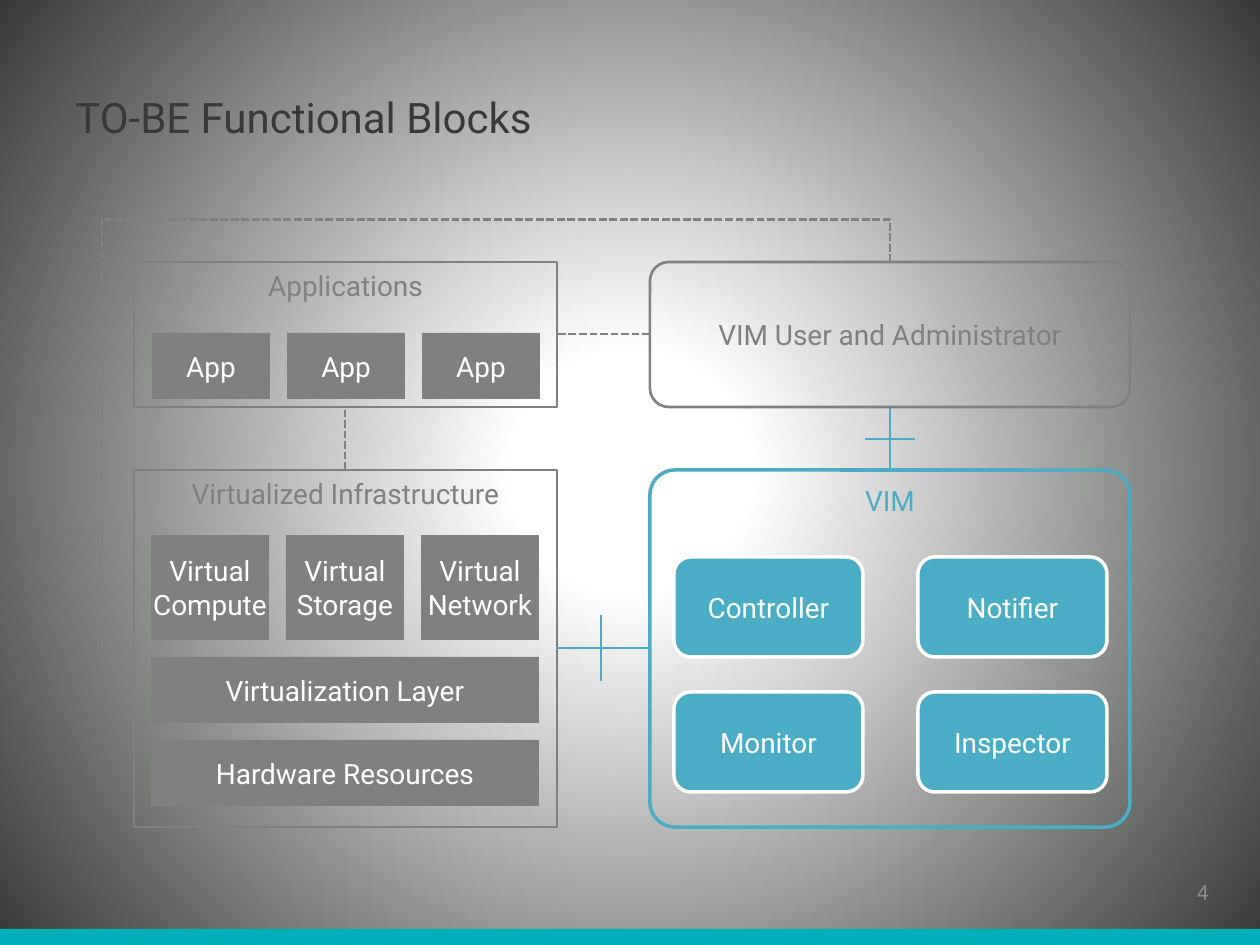
from dataclasses import dataclass

from lxml.etree import SubElement
from pptx import Presentation
from pptx.dml.color import RGBColor
from pptx.enum.dml import MSO_LINE
from pptx.enum.shapes import MSO_CONNECTOR, MSO_SHAPE
from pptx.enum.text import MSO_ANCHOR, PP_ALIGN
from pptx.oxml.ns import qn
from pptx.util import Emu, Pt

TITLE = "TO-BE Functional Blocks"
PAGE_NUMBER = "4"
APPS = ["App", "App", "App"]
VIRTUAL_RESOURCES = ["Virtual Compute", "Virtual Storage", "Virtual Network"]
LAYERS = ["Virtualization Layer", "Hardware Resources"]
VIM_PARTS = [["Controller", "Notifier"], ["Monitor", "Inspector"]]


@dataclass(frozen=True)
class Theme:
    font: str = "Roboto"
    dark: str = "373A36"
    gray: str = "808080"
    number: str = "8C8C8C"
    blue: str = "4BACC6"
    teal: str = "00B0B9"
    white: str = "FFFFFF"
    title_size: int = 24
    body_size: int = 16
    number_size: int = 12
    thin: float = 1.5
    thick: float = 2


THEME = Theme()
EMU_PER_PX = 914400 / 126
SLIDE_WIDTH, SLIDE_HEIGHT = 1260, 945

# Frames: left, top, width, height
LEFT, RIGHT, LEFT_WIDTH, RIGHT_WIDTH = 134, 650, 423, 480
UPPER, LOWER, UPPER_HEIGHT, LOWER_HEIGHT = 262, 470, 145, 357
APPLICATIONS = (LEFT, UPPER, LEFT_WIDTH, UPPER_HEIGHT)
INFRASTRUCTURE = (LEFT, LOWER, LEFT_WIDTH, LOWER_HEIGHT)
USER = (RIGHT, UPPER, RIGHT_WIDTH, UPPER_HEIGHT)
VIM = (RIGHT, LOWER, RIGHT_WIDTH, LOWER_HEIGHT)

TILE_LEFT, TILE_WIDTH, TILE_STEP = 151, 118, 135
LAYER_HEIGHT, LAYER_STEP = 66, 83
PART_WIDTH, PART_HEIGHT = 189, 100
PART_STEP_X, PART_STEP_Y = 244, 135


def px(value):
    return Emu(round(value * EMU_PER_PX))


def color(value):
    return RGBColor.from_string(value)


def write(shape, text, *, size=THEME.body_size, ink=THEME.white,
          align=PP_ALIGN.CENTER, anchor=MSO_ANCHOR.MIDDLE, side_margin=None):
    frame = shape.text_frame
    frame.word_wrap = True
    frame.vertical_anchor = anchor
    if side_margin is not None:
        frame.margin_left = frame.margin_right = px(side_margin)
    para = frame.paragraphs[0]
    para.alignment = align
    span = para.add_run()
    span.text = text
    span.font.name = THEME.font
    span.font.size = Pt(size)
    span.font.color.rgb = color(ink)


def add_text(page, bounds, text, **text_format):
    write(page.shapes.add_textbox(*map(px, bounds)), text, **text_format)


def add_box(page, bounds, text="", *, fill=None, line=None, width=THEME.thin,
            rounded=False, corner=None, **text_format):
    kind = MSO_SHAPE.ROUNDED_RECTANGLE if rounded else MSO_SHAPE.RECTANGLE
    box = page.shapes.add_shape(kind, *map(px, bounds))
    box.shadow.inherit = False
    if corner is not None:
        box.adjustments[0] = corner
    if fill:
        box.fill.solid()
        box.fill.fore_color.rgb = color(fill)
    else:
        box.fill.background()
    if line:
        box.line.color.rgb = color(line)
        box.line.width = Pt(width)
    else:
        box.line.fill.background()
    if text:
        write(box, text, **text_format)


def add_line(page, start, end, ink, dashed=False, kind=MSO_CONNECTOR.STRAIGHT):
    line = page.shapes.add_connector(kind, *map(px, (*start, *end)))
    line.line.color.rgb = color(ink)
    line.line.width = Pt(THEME.thin)
    if dashed:
        line.line.dash_style = MSO_LINE.SQUARE_DOT
    SubElement(line._element.spPr, qn("a:effectLst"))
    return line


def add_detour(page, start, end, top, left):
    """Dashed connector that runs up to top, across to left, down and into end."""
    (x1, y1), (x2, y2) = start, end
    rise, run = y2 - y1, x1 - x2
    middle_x, middle_y = (x1 + x2) / 2, (y1 + y2) / 2
    # The bounds are those before the quarter turn, so width and height swap.
    line = add_line(page, (middle_x + rise / 2, middle_y + run / 2),
                    (middle_x - rise / 2, middle_y - run / 2),
                    THEME.gray, True, MSO_CONNECTOR.ELBOW)
    properties = line._element.spPr
    properties.find(qn("a:xfrm")).set("rot", str(270 * 60000))
    geometry = properties.find(qn("a:prstGeom"))
    geometry.set("prst", "bentConnector4")
    guides = geometry.find(qn("a:avLst"))
    if guides is None:
        guides = SubElement(geometry, qn("a:avLst"))
    ratios = ((top - y1) / rise, (x1 - left) / run)
    for number, ratio in enumerate(ratios, 1):
        SubElement(guides, qn("a:gd"), name=f"adj{number}",
                   fmla=f"val {round(ratio * 100000)}")


def paint_background(page):
    fill = page.background.fill
    fill.gradient()
    stops = ((0.15, THEME.white), (1, THEME.dark))
    for stop, (position, ink) in zip(fill.gradient_stops, stops):
        stop.position = position
        stop.color.rgb = color(ink)
    gradient = page._element.find(".//" + qn("a:gradFill"))
    gradient.remove(gradient.find(qn("a:lin")))
    circle = SubElement(gradient, qn("a:path"), path="circle")
    SubElement(circle, qn("a:fillToRect"),
               {side: "50000" for side in "ltrb"})


def add_frames_and_links(page):
    heading = {"ink": THEME.gray, "anchor": MSO_ANCHOR.TOP}
    user_x = RIGHT + RIGHT_WIDTH // 2
    apps_x = LEFT + LEFT_WIDTH // 2
    left_edge = LEFT + LEFT_WIDTH
    upper_edge = UPPER + UPPER_HEIGHT
    user_y, vim_y = 334, 648

    add_box(page, INFRASTRUCTURE, "Virtualized Infrastructure",
            line=THEME.gray, **heading)
    add_line(page, (RIGHT, user_y), (left_edge, user_y), THEME.gray, True)
    add_box(page, APPLICATIONS, "Applications", line=THEME.gray, **heading)
    add_line(page, (user_x, LOWER), (user_x, upper_edge), THEME.blue)
    add_box(page, USER, "VIM User and Administrator", line=THEME.gray,
            rounded=True, corner=0.13, ink=THEME.gray)
    add_line(page, (left_edge, vim_y), (RIGHT, vim_y), THEME.blue)
    add_box(page, VIM, "VIM", line=THEME.blue, width=THEME.thick, rounded=True,
            corner=0.07, ink=THEME.blue, anchor=MSO_ANCHOR.TOP)
    add_line(page, (apps_x, LOWER), (apps_x, upper_edge), THEME.gray, True)
    add_detour(page, (user_x, UPPER), (LEFT, vim_y), top=219, left=102)
    add_line(page, (865, 439), (915, 439), THEME.blue)
    add_line(page, (601, 615), (601, 681), THEME.blue)


def add_blocks(page):
    for labels, left, top, height in (
            (VIRTUAL_RESOURCES, TILE_LEFT, 535, 105),
            (APPS, TILE_LEFT + 1, 333, LAYER_HEIGHT)):
        for column, label in enumerate(labels):
            add_box(page, (left + column * TILE_STEP, top, TILE_WIDTH, height),
                    label, fill=THEME.gray, side_margin=0)
    layer_width = 2 * TILE_STEP + TILE_WIDTH
    for row, label in enumerate(LAYERS):
        add_box(page, (TILE_LEFT, 657 + row * LAYER_STEP, layer_width, LAYER_HEIGHT),
                label, fill=THEME.gray)
    for row, labels in enumerate(VIM_PARTS):
        for column, label in enumerate(labels):
            add_box(page, (674 + column * PART_STEP_X, 557 + row * PART_STEP_Y,
                           PART_WIDTH, PART_HEIGHT),
                    label, fill=THEME.blue, line=THEME.white,
                    width=THEME.thick, rounded=True)


def main():
    deck = Presentation()
    deck.slide_width, deck.slide_height = px(SLIDE_WIDTH), px(SLIDE_HEIGHT)
    page = deck.slides.add_slide(deck.slide_layouts[6])
    paint_background(page)
    add_box(page, (0, 929, SLIDE_WIDTH, 16), fill=THEME.teal)
    add_text(page, (1138, 844, 83, 67), PAGE_NUMBER, size=THEME.number_size,
             ink=THEME.number, align=PP_ALIGN.RIGHT, anchor=MSO_ANCHOR.BOTTOM)
    add_text(page, (63, 38, 1134, 158), TITLE, size=THEME.title_size,
             ink=THEME.dark, align=PP_ALIGN.LEFT)
    add_frames_and_links(page)
    add_blocks(page)
    deck.save("out.pptx")


if __name__ == "__main__":
    main()
